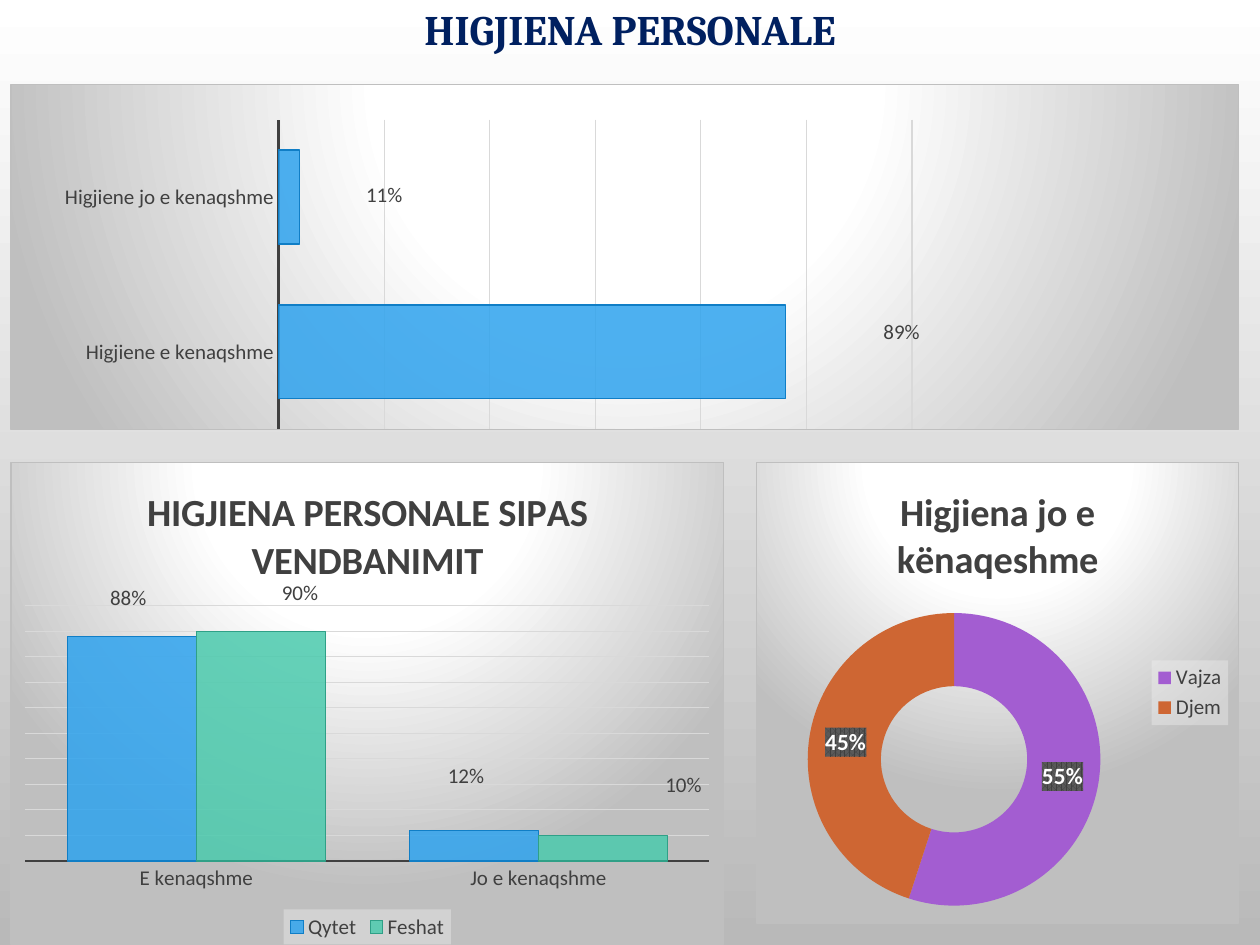
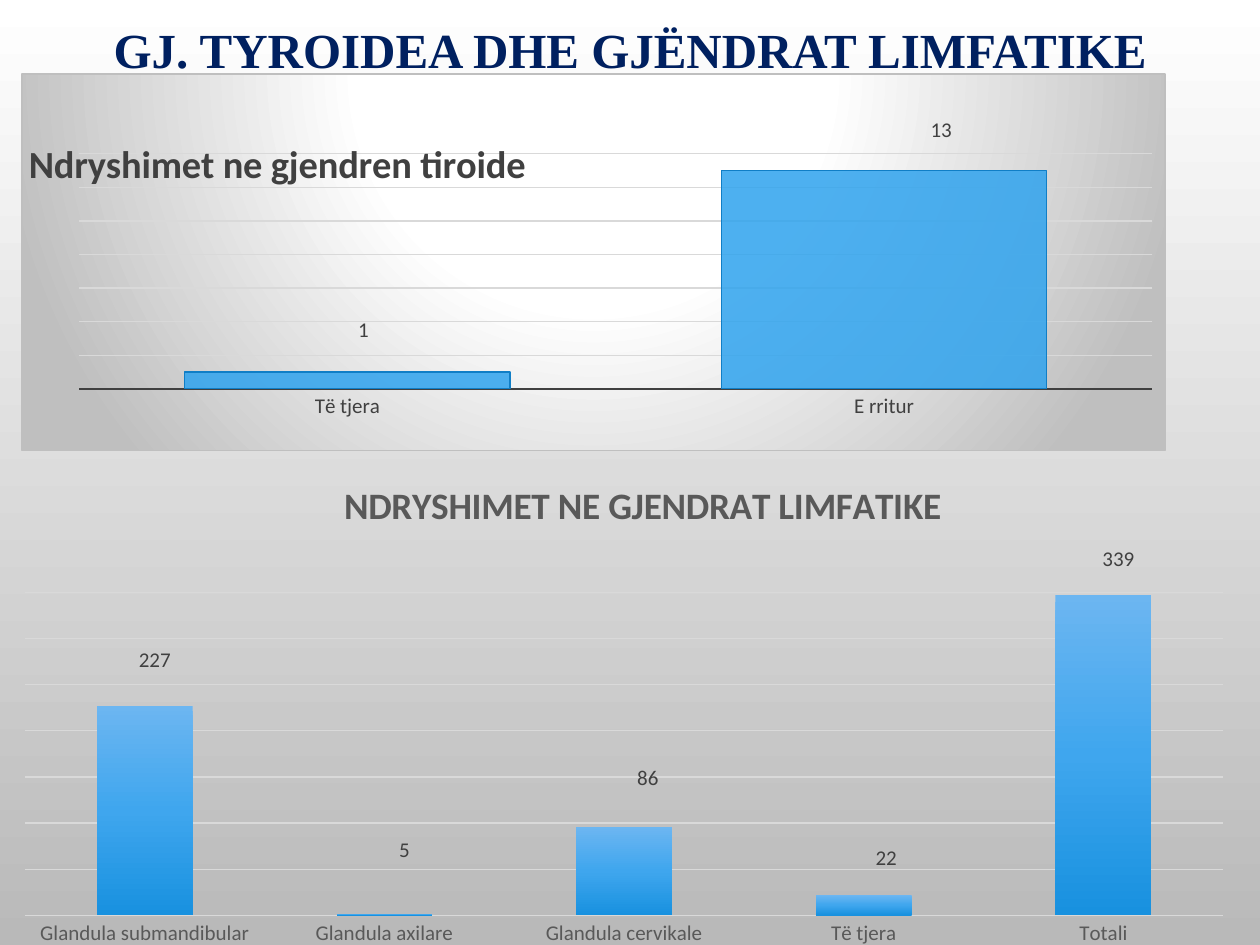
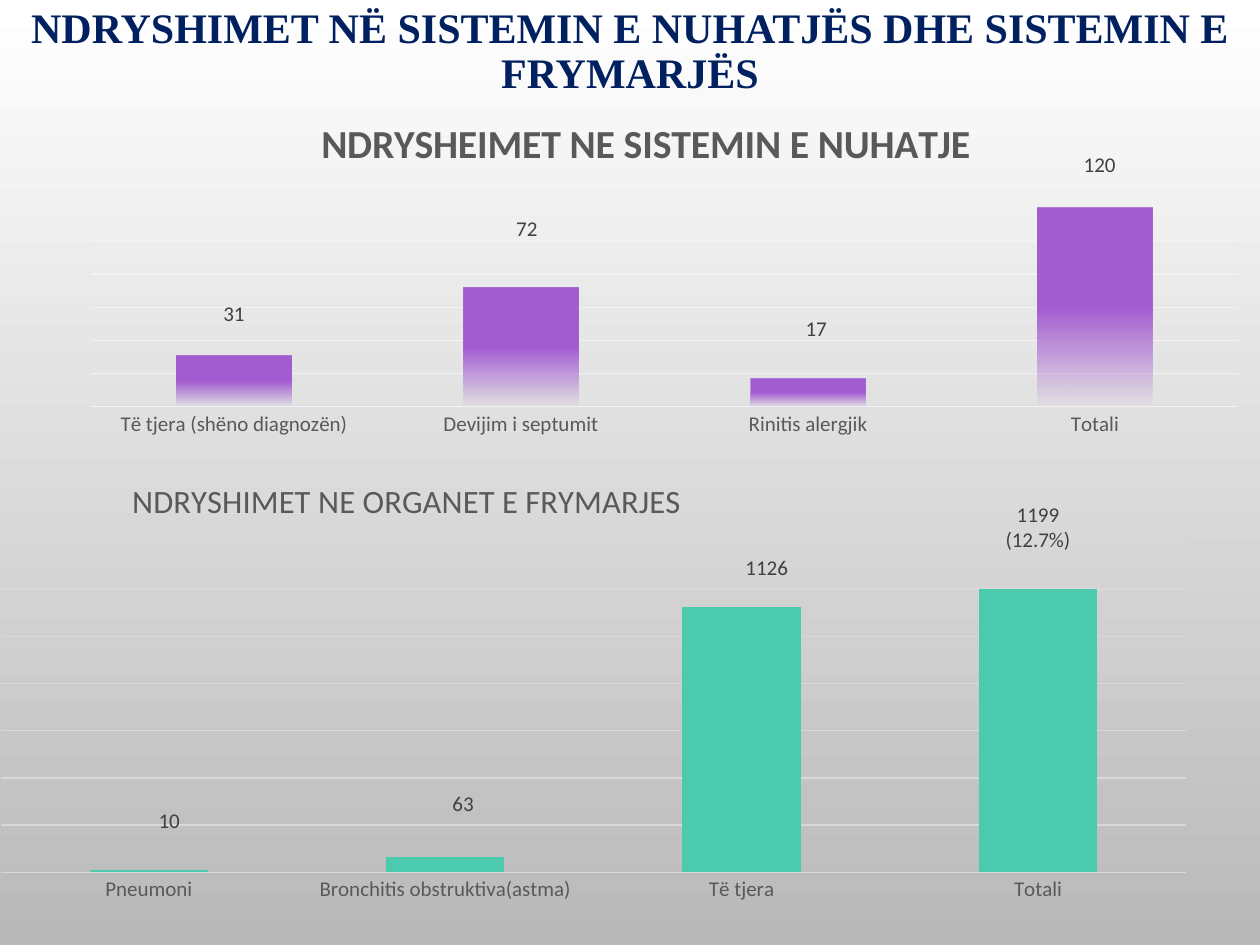
from pptx import Presentation
from pptx.chart.data import CategoryChartData
from pptx.dml.color import RGBColor
from pptx.enum.chart import (
    XL_CHART_TYPE as ChartType,
    XL_LABEL_POSITION as LabelPosition,
    XL_LEGEND_POSITION as LegendPosition,
    XL_TICK_LABEL_POSITION as TickLabels,
    XL_TICK_MARK as TickMark,
)
from pptx.enum.text import MSO_ANCHOR, PP_ALIGN
from pptx.oxml import parse_xml
from pptx.oxml.ns import nsdecls, qn
from pptx.util import Cm, Pt

NAVY = RGBColor(0x00, 0x20, 0x60)
WHITE = RGBColor(0xFF, 0xFF, 0xFF)
BLACK = RGBColor(0x00, 0x00, 0x00)
BACKDROP_GRAY = RGBColor(0xB9, 0xB9, 0xB9)
PANEL_GRAY = RGBColor(0xBF, 0xBF, 0xBF)
GRID_GRAY = RGBColor(0xD9, 0xD9, 0xD9)
PALE_GRAY = RGBColor(0xF2, 0xF2, 0xF2)
DARK_TEXT = RGBColor(0x40, 0x40, 0x40)
MID_TEXT = RGBColor(0x59, 0x59, 0x59)
BLUE = RGBColor(0x2F, 0xA3, 0xEE)
BLUE_EDGE = RGBColor(0x10, 0x7E, 0xC6)
BLUE_LIGHT = RGBColor(0x6C, 0xB6, 0xF1)
BLUE_MIDDLE = RGBColor(0x3F, 0xA6, 0xEE)
BLUE_DEEP = RGBColor(0x18, 0x91, 0xDF)
TEAL = RGBColor(0x4B, 0xCA, 0xAD)
TEAL_EDGE = RGBColor(0x2F, 0xA0, 0x87)
PURPLE = RGBColor(0xA3, 0x5D, 0xD1)
ORANGE = RGBColor(0xCE, 0x66, 0x33)

CHART_FONT = "Calibri"
DOWNWARD = '<a:lin ang="5400000" scaled="0"/>'
FROM_ABOVE = ('<a:path path="circle">'
              '<a:fillToRect l="50000" t="-80000" r="50000" b="180000"/></a:path>')
NO_LEADER_LINES = (
    f'<c:extLst {nsdecls("c")}><c:ext uri="{{CE6537A1-D6FC-4f65-9D91-7224C49458BB}}" '
    'xmlns:c15="http://schemas.microsoft.com/office/drawing/2012/chart">'
    '<c15:showLeaderLines val="0"/></c:ext></c:extLst>')


def color_xml(color, opacity=100):
    return f'<a:srgbClr val="{color}"><a:alpha val="{opacity * 1000}"/></a:srgbClr>'


def solid(color, opacity=100):
    return f"<a:solidFill>{color_xml(color, opacity)}</a:solidFill>"


def gradient(stops, direction):
    """Fill XML from (percent, colour[, opacity]) stops."""
    marks = "".join(f'<a:gs pos="{position * 1000}">{color_xml(*shade)}</a:gs>'
                    for position, *shade in stops)
    return f'<a:gradFill rotWithShape="1"><a:gsLst>{marks}</a:gsLst>{direction}</a:gradFill>'


def outline(color, width=0.75):
    return f'<a:ln w="{int(Pt(width))}">{solid(color)}</a:ln>'


PANEL = gradient([(0, WHITE), (39, WHITE), (100, PANEL_GRAY)], FROM_ABOVE) + outline(PANEL_GRAY)
NO_PANEL = "<a:noFill/><a:ln><a:noFill/></a:ln>"
BLUE_BAR = solid(BLUE, 85) + outline(BLUE_EDGE)
TEAL_BAR = solid(TEAL, 85) + outline(TEAL_EDGE)
BLUE_FADE = gradient([(0, BLUE_LIGHT), (50, BLUE_MIDDLE), (100, BLUE_DEEP)], DOWNWARD)
PURPLE_FADE = gradient([(50, PURPLE), (100, PURPLE, 0)], DOWNWARD)
LABEL_PATTERN = (f'<a:pattFill prst="pct75"><a:fgClr>{color_xml(DARK_TEXT)}</a:fgClr>'
                 f"<a:bgClr>{color_xml(MID_TEXT)}</a:bgClr></a:pattFill>")


def shape_properties(content):
    return parse_xml(f'<c:spPr {nsdecls("c", "a")}>{content}</c:spPr>')


def paint_behind_text(element, content):
    """Fill a chart part whose font is already set."""
    element.find(qn("c:txPr")).addprevious(shape_properties(content))


def place(element, index, x, y, size=None):
    """Give a chart part a manual layout, in percent of the chart."""
    for old in element.findall(qn("c:layout")):
        element.remove(old)
    parts = [("x", x), ("y", y)]
    modes = ""
    if size:
        modes = ('<c:layoutTarget val="inner"/>'
                 '<c:xMode val="edge"/><c:yMode val="edge"/>')
        parts += [("w", size[0]), ("h", size[1])]
    elif element.tag == qn("c:title"):
        modes = '<c:xMode val="edge"/><c:yMode val="edge"/>'
    values = "".join(f'<c:{name} val="{value / 100:.4f}"/>' for name, value in parts)
    element.insert(index, parse_xml(
        f'<c:layout {nsdecls("c")}><c:manualLayout>{modes}{values}</c:manualLayout></c:layout>'))


def hide_leader_lines(labels_element):
    for switch in labels_element.findall(qn("c:showLeaderLines")):
        switch.set("val", "0")
    labels_element.append(parse_xml(NO_LEADER_LINES))


def set_font(font, size, color, bold=False, name=CHART_FONT):
    font.size, font.bold, font.name = Pt(size), bold, name
    font.color.rgb = color


def add_slide(prs):
    return prs.slides.add_slide(prs.slide_layouts[6])


def add_heading(slide, text, size, height=2.12, font_name="Times New Roman",
                anchor=MSO_ANCHOR.MIDDLE):
    frame = slide.shapes.add_textbox(0, 0, Cm(25.4), Cm(height)).text_frame
    frame.word_wrap = True
    frame.vertical_anchor = anchor
    frame.margin_top = frame.margin_bottom = Cm(0.19)
    heading = frame.paragraphs[0]
    heading.text = text
    heading.alignment = PP_ALIGN.CENTER
    heading.line_spacing = 0.9
    set_font(heading.font, size, NAVY, True, font_name)


def add_chart(slide, kind, box, categories, series, panel, number_format="General"):
    data = CategoryChartData(number_format=number_format)
    data.categories = categories
    for name, values in series:
        data.add_series(name, values)
    chart = slide.shapes.add_chart(kind, *map(Cm, box), data).chart
    set_font(chart.font, 10, BLACK)
    paint_behind_text(chart._chartSpace, panel)
    chart.has_title = chart.has_legend = False
    return chart


def add_title(chart, text, color, size=22, bold=True, corner=None):
    frame = chart.chart_title.text_frame
    frame.text = text
    set_font(frame.paragraphs[0].font, size, color, bold)
    if corner:
        place(chart._chartSpace.chart.find(qn("c:title")), 1, *corner)


def add_legend(chart, position):
    chart.has_legend = True
    legend = chart.legend
    legend.position = position
    legend.include_in_layout = False
    set_font(legend.font, 12, DARK_TEXT)
    paint_behind_text(legend._element, solid(PALE_GRAY, 39))


def style_axes(chart, top, step, text_color, base_line, grid_color):
    """base_line is (colour, width) or None."""
    names, scale = chart.category_axis, chart.value_axis
    for axis in (names, scale):
        axis.major_tick_mark = axis.minor_tick_mark = TickMark.NONE
        set_font(axis.tick_labels.font, 12, text_color)
    names.has_major_gridlines = False
    if base_line:
        names.format.line.color.rgb, names.format.line.width = base_line[0], Pt(base_line[1])
    else:
        names.format.line.fill.background()
    scale.minimum_scale, scale.maximum_scale, scale.major_unit = 0, top, step
    scale.tick_label_position = TickLabels.NONE
    scale.format.line.fill.background()
    scale.has_major_gridlines = True
    scale.major_gridlines.format.line.color.rgb = grid_color
    scale.major_gridlines.format.line.width = Pt(0.75)


def label_bars(series, labels, number_format):
    """labels holds (shift right, shift down[, lines of text]) for each bar."""
    shared = series.data_labels
    shared.show_value = True
    shared.number_format, shared.number_format_is_linked = number_format, False
    shared.position = LabelPosition.OUTSIDE_END
    set_font(shared.font, 12, DARK_TEXT)
    for index, (right, down, *lines) in enumerate(labels):
        label = series.points[index].data_label
        label.position = LabelPosition.OUTSIDE_END
        if lines:
            label.text_frame.text = "\n".join(lines)
            for paragraph in label.text_frame.paragraphs:
                set_font(paragraph.font, 12, DARK_TEXT)
        else:
            set_font(label.font, 12, DARK_TEXT)
        place(shared._element.findall(qn("c:dLbl"))[index], 1, right, down)
    hide_leader_lines(shared._element)


def add_bars(slide, box, categories, series, top, step, kind=ChartType.COLUMN_CLUSTERED,
             panel=NO_PANEL, gap=150, text_color=MID_TEXT, base_line=None,
             grid_color=GRID_GRAY, number_format="General", plot_box=None):
    """series holds (name, values, bar fill, labels)."""
    chart = add_chart(slide, kind, box, categories, [item[:2] for item in series],
                      panel, number_format)
    style_axes(chart, top, step, text_color, base_line, grid_color)
    plot = chart.plots[0]
    plot.gap_width, plot.overlap, plot.vary_by_categories = gap, 0, False
    for bars, (_, _, fill, labels) in zip(plot.series, series):
        bars.invert_if_negative = False
        bars._element.get_or_add_spPr().extend(list(shape_properties(fill)))
        label_bars(bars, labels, number_format)
    if plot_box:
        x, y, *size = plot_box
        place(chart._chartSpace.chart.plotArea, 0, x, y, size)
    return chart


def add_panel_bars(slide, box, categories, series, top, step, **options):
    return add_bars(slide, box, categories, series, top, step, panel=PANEL, gap=65,
                    text_color=DARK_TEXT, base_line=(DARK_TEXT, 1.5), **options)


def add_ring(slide, box, categories, values, colors):
    chart = add_chart(slide, ChartType.DOUGHNUT, box, categories,
                      [("Series 1", values)], PANEL)
    ring = chart.plots[0].series[0]
    for index, color in enumerate(colors):
        fill = ring.points[index].format.fill
        fill.solid()
        fill.fore_color.rgb = color
    labels = ring.data_labels
    labels.show_percentage, labels.show_value = True, False
    labels.number_format, labels.number_format_is_linked = "0%", False
    set_font(labels.font, 13.3, WHITE, True)
    paint_behind_text(labels._element, LABEL_PATTERN)
    return chart


def build_hygiene(prs):
    slide = add_slide(prs)
    add_heading(slide, "HIGJIENA PERSONALE", 24, 1.85, "Cambria", MSO_ANCHOR.TOP)
    add_panel_bars(
        slide, (0.21, 1.69, 24.77, 6.99),
        ["Higjiene e kenaqshme", "Higjiene jo e kenaqshme"],
        [("Series 1", (0.96, 0.04), BLUE_BAR, [(7.6, -5.8, "89%"), (5, -0.6, "11%")])],
        1.2, 0.2, kind=ChartType.BAR_CLUSTERED, number_format="0%",
        plot_box=(21.8, 10.2, 51.6, 89.8))
    by_sex = add_ring(slide, (15.24, 9.31, 9.74, 9.31), ["Vajza", "Djem"],
                      (55, 45), (PURPLE, ORANGE))
    add_title(by_sex, "Higjiena jo e kënaqeshme", DARK_TEXT)
    add_legend(by_sex, LegendPosition.RIGHT)
    by_residence = add_panel_bars(
        slide, (0.21, 9.31, 14.39, 9.74), ["E kenaqshme", "Jo e kenaqshme"],
        [("Qytet", (0.88, 0.12), BLUE_BAR, [(-0.5, -4.3), (-1.1, -7.7)]),
         ("Feshat", (0.9, 0.1), TEAL_BAR, [(5.5, -4.3), (11.3, -6.8)])],
        1, 0.1, number_format="0%")
    add_title(by_residence, "HIGJIENA PERSONALE SIPAS VENDBANIMIT", DARK_TEXT)
    add_legend(by_residence, LegendPosition.BOTTOM)


def build_glands(prs):
    slide = add_slide(prs)
    add_heading(slide, "GJ. TYROIDEA DHE GJËNDRAT LIMFATIKE", 28)
    thyroid = add_panel_bars(
        slide, (0.43, 1.48, 23.07, 7.62), ["Të tjera", "E rritur"],
        [("Series 1", (1, 13), BLUE_BAR, [(1.4, -6.5), (5, -6.1)])],
        14, 2, plot_box=(5, 21.2, 93.9, 62.4))
    add_title(thyroid, "Ndryshimet ne gjendren tiroide", DARK_TEXT, corner=(0, 15))
    lymph = add_bars(
        slide, (0, 9.1, 25.19, 10.16),
        ["Glandula submandibular", "Glandula axilare", "Glandula cervikale",
         "Të tjera", "Totali"],
        [("Series 1", (227, 2, 96, 22, 347), BLUE_FADE,
          [(0.8, -5.6), (1.6, -9.1, "5"), (1.9, -6.2, "86"), (1.8, -3.8),
           (1.2, -3.6, "339")])],
        350, 50, base_line=(GRID_GRAY, 1), plot_box=(2, 28, 95.9, 64.1))
    add_title(lymph, "NDRYSHIMET NE GJENDRAT LIMFATIKE", MID_TEXT, 21.3, corner=(27, 4.2))


def build_breathing(prs):
    slide = add_slide(prs)
    add_heading(slide, "NDRYSHIMET NË SISTEMIN E NUHATJËS DHE SISTEMIN E FRYMARJËS", 24)
    smell = add_bars(
        slide, (1.06, 1.9, 23.92, 7.62),
        ["Të tjera (shëno diagnozën)", "Devijim i septumit", "Rinitis alergjik", "Totali"],
        [("Series 1", (31, 72, 17, 120), PURPLE_FADE,
          [(0, -6.3), (0.5, -10.8), (0.7, -8.5), (0.4, -6.6)])],
        140, 20, grid_color=PALE_GRAY, plot_box=(3.2, 21.3, 96.8, 61.4))
    add_title(smell, "NDRYSHEIMET NE SISTEMIN E NUHATJE", MID_TEXT, 22.7)
    airways = add_bars(
        slide, (0, 9.31, 24.13, 9.74),
        ["Pneumoni", "Bronchitis obstruktiva(astma)", "Të tjera", "Totali"],
        [("Series 1", (10, 63, 1126, 1199), solid(TEAL),
          [(1.7, -6.5), (1.5, -7.5), (2.1, -4.3), (0, -6.5, "1199", "(12.7%)")])],
        1400, 200, plot_box=(0, 16.6, 99.1, 68.4))
    add_title(airways, "NDRYSHIMET NE ORGANET E FRYMARJES", MID_TEXT, 18.6, False,
              corner=(10.5, 2.1))


def main():
    prs = Presentation()
    prs.slide_width, prs.slide_height = Cm(25.4), Cm(19.05)
    backdrop = prs.slide_master.background.fill
    backdrop.gradient()
    backdrop.gradient_angle = 270
    for stop, color in zip(backdrop.gradient_stops, (WHITE, BACKDROP_GRAY)):
        stop.color.rgb = color
    build_hygiene(prs)
    build_glands(prs)
    build_breathing(prs)
    prs.save("out.pptx")


if __name__ == "__main__":
    main()
